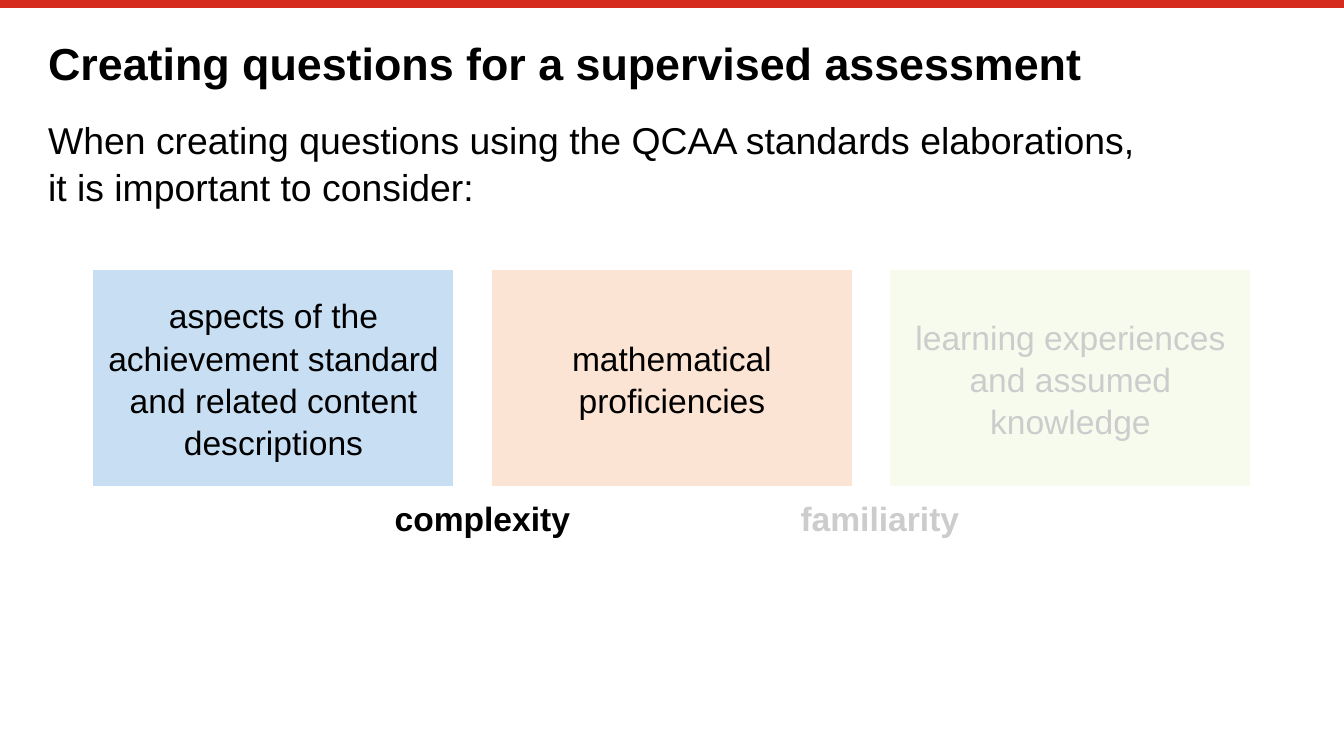
from lxml import etree
from pptx import Presentation
from pptx import util as u
from pptx.dml import color
from pptx.enum import shapes, text
from pptx.oxml import ns

BLACK, WHITE, RED = "000000", "FFFFFF", "D52B1E"
CARDS = [
    ("aspects of the achievement standard and related content descriptions", "C8DEF2"),
    ("mathematical proficiencies", "FBE4D3"),
    ("learning experiences and assumed knowledge", "D6EBAD"),
]


def rgb(value):
    return color.RGBColor.from_string(value)


def cm(box):
    return [u.Cm(length) for length in box]


def write(part, words, size, bold=False, align=text.PP_ALIGN.LEFT,
          anchor=text.MSO_ANCHOR.TOP, inset=(0, 0), spacing=1.0):
    frame = part.text_frame
    frame.word_wrap = True
    frame.vertical_anchor = anchor
    frame.margin_left = frame.margin_right = u.Cm(inset[0])
    frame.margin_top = frame.margin_bottom = u.Cm(inset[1])
    frame.text = words
    paragraph = frame.paragraphs[0]
    paragraph.alignment = align
    paragraph.line_spacing = spacing
    paragraph.font.name = "Arial"
    paragraph.font.size = u.Pt(size)
    paragraph.font.bold = bold
    paragraph.font.color.rgb = rgb(BLACK)


def block(slide, box, fill):
    part = slide.shapes.add_shape(shapes.MSO_SHAPE.RECTANGLE, *cm(box))
    part.shadow.inherit = False
    part.fill.solid()
    part.fill.fore_color.rgb = rgb(fill)
    part.line.fill.background()
    return part


def top_rule(slide, box):
    left, top, width, _ = box
    rule = slide.shapes.add_connector(
        shapes.MSO_CONNECTOR.STRAIGHT, *cm((left, top, left + width, top)))
    rule.line.color.rgb = rgb(RED)
    rule.line.width = u.Pt(4.2)
    etree.SubElement(rule._element.spPr, ns.qn("a:effectLst"))


def heading(slide, box):
    title = slide.shapes.add_textbox(*cm(box))
    write(title, "Creating questions for a supervised assessment", 24, bold=True,
          anchor=text.MSO_ANCHOR.MIDDLE, spacing=0.9)


def introduction(slide, box):
    intro = slide.shapes.add_textbox(*cm(box))
    write(intro, "When creating questions using the QCAA standards elaborations, \v"
                 "it is important to consider:", 20, spacing=1.05)


def card_row(slide, box, gap=0.69):
    left, top, width, height = box
    card_width = (width - gap * (len(CARDS) - 1)) / len(CARDS)
    for index, (words, fill) in enumerate(CARDS):
        card = block(slide, (left + index * (card_width + gap), top, card_width, height), fill)
        card.line.color.rgb = rgb(WHITE)
        card.line.width = u.Pt(1)
        write(card, words, 18, align=text.PP_ALIGN.CENTER,
              anchor=text.MSO_ANCHOR.MIDDLE, inset=(0.18, 0.18), spacing=1.05)


def factor(slide, box, words):
    label = slide.shapes.add_textbox(*cm(box))
    write(label, words, 18, bold=True, inset=(0.25, 0.13), spacing=1.05)


def veil(slide, box):
    cover = block(slide, box, WHITE)
    tint = cover._element.spPr.find(ns.qn("a:solidFill"))[0]
    etree.SubElement(tint, ns.qn("a:alpha"), val="80000")


def main():
    deck = Presentation()
    deck.slide_width, deck.slide_height = u.Cm(25.4), u.Cm(14.29)
    slide = deck.slides.add_slide(deck.slide_layouts[6])

    # Red rule, title and introduction
    top_rule(slide, (0, 0.08, 25.4, 0))
    introduction(slide, (0.91, 2.17, 23.6, 5.8))
    heading(slide, (0.91, 0.76, 23.6, 0.99))

    # Three considerations and the factors between them
    card_row(slide, (1.75, 5.09, 21.9, 4.11))
    factor(slide, (7.21, 9.25, 4.19, 1.02), "complexity")
    factor(slide, (14.88, 9.25, 3.96, 1.02), "familiarity")

    # White veils that fade the last factor and the last card
    veil(slide, (14.48, 9.32, 3.76, 0.97))
    veil(slide, (16.54, 3.96, 7.75, 5.54))

    deck.save("out.pptx")


if __name__ == "__main__":
    main()
